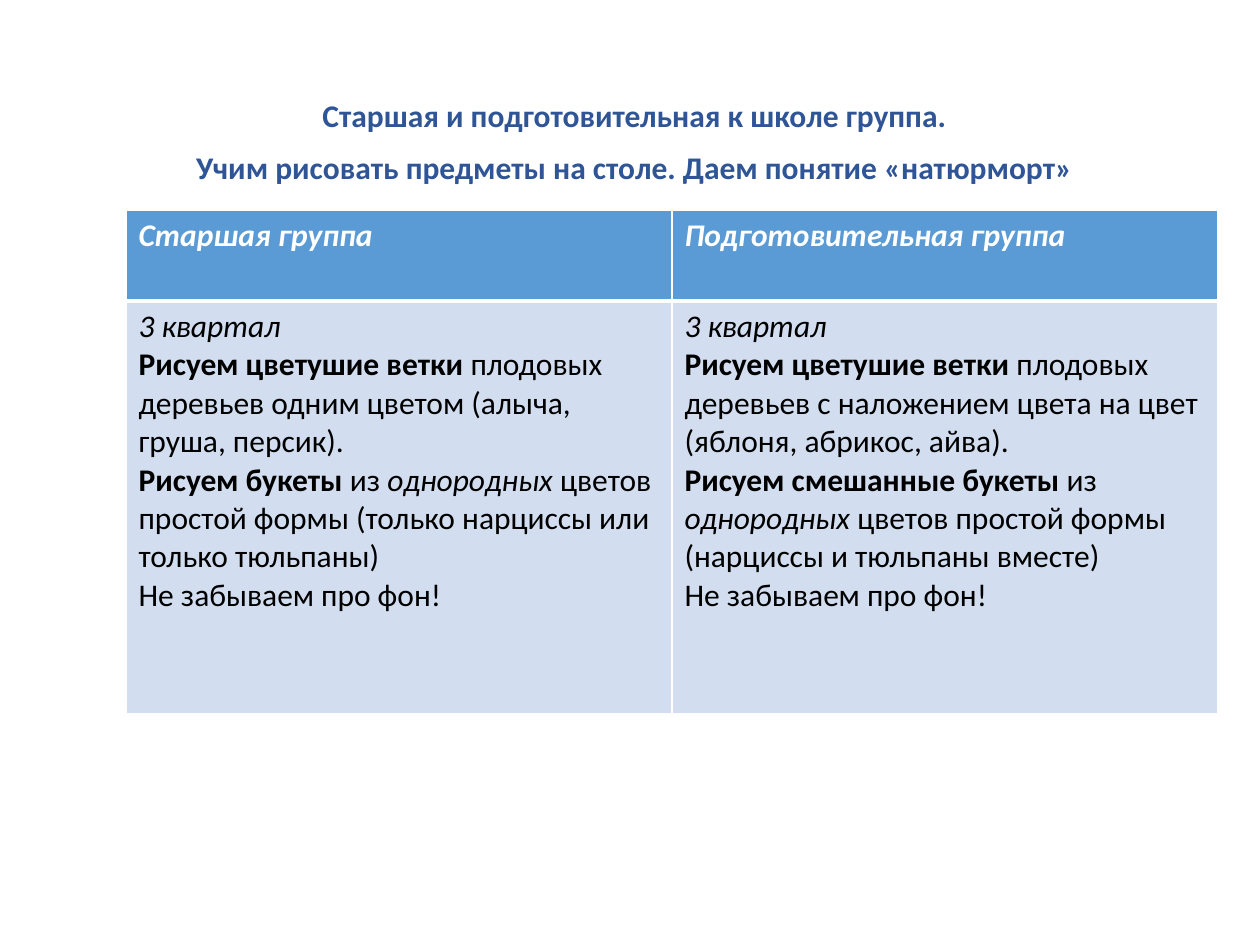
from lxml import etree
from pptx import Presentation
from pptx import util as u
from pptx.dml import color
from pptx.enum import text
from pptx.oxml import ns

SCALE = u.Inches(1) / 126
FONT, SIZE = "Calibri", 18
TITLE_BOX = (94, 94, 1081, 746)
TABLE_LEFT, TABLE_TOP = 126, 210
COLUMN_WIDTH = 546
ROW_HEIGHTS = (91, 413)
WHITE, BLACK, TITLE_BLUE = "FFFFFF", "000000", "2F5597"
HEADER_FILL, BODY_FILL = "5B9BD5", "D2DEEF"

TITLE = [
    [("Старшая и подготовительная к школе группа.", "b")],
    [("Учим рисовать предметы на столе. Даем понятие «натюрморт»", "b")],
]
QUARTER = [("3 квартал", "i")]
REMINDER = [("Не забываем про фон!", "")]
HEADERS = [
    [[("Старшая группа", "bi")]],
    [[("Подготовительная группа", "bi")]],
]
LESSONS = [
    [
        QUARTER,
        [("Рисуем цветушие ветки", "b"),
         (" плодовых деревьев одним цветом (алыча, груша, персик).", "")],
        [("Рисуем букеты", "b"), (" из ", ""), ("однородных", "i"),
         (" цветов простой формы (только нарциссы или только тюльпаны)", "")],
        REMINDER,
    ],
    [
        QUARTER,
        [("Рисуем цветушие ветки", "b"),
         (" плодовых деревьев с наложением цвета на цвет", "")],
        [("(яблоня, абрикос, айва).", "")],
        [("Рисуем смешанные букеты", "b"), (" из ", ""), ("однородных", "i"),
         (" цветов простой формы (нарциссы и тюльпаны вместе)", "")],
        REMINDER,
    ],
]
ROWS = [(HEADERS, HEADER_FILL, WHITE, 3), (LESSONS, BODY_FILL, BLACK, 1)]


def px(value):
    return u.Emu(round(value * SCALE))


def rgb(value):
    return color.RGBColor.from_string(value)


def write(frame, paragraphs, font_color):
    for index, runs in enumerate(paragraphs):
        paragraph = frame.paragraphs[0] if index == 0 else frame.add_paragraph()
        for words, style in runs:
            run = paragraph.add_run()
            run.text = words
            run.font.name, run.font.size = FONT, u.Pt(SIZE)
            run.font.bold, run.font.italic = "b" in style, "i" in style
            run.font.color.rgb = rgb(font_color)


def add_borders(cell, bottom_width):
    properties = cell._tc.get_or_add_tcPr()
    for side, width in zip("LRTB", (1, 1, 1, bottom_width)):
        line = etree.SubElement(properties, ns.qn(f"a:ln{side}"), w=str(u.Pt(width)))
        fill = etree.SubElement(line, ns.qn("a:solidFill"))
        etree.SubElement(fill, ns.qn("a:srgbClr"), val=WHITE)


def add_title(slide):
    title = slide.shapes.title
    title.left, title.top, title.width, title.height = map(px, TITLE_BOX)
    frame = title.text_frame
    frame.word_wrap = True
    frame.auto_size = text.MSO_AUTO_SIZE.NONE
    frame.vertical_anchor = text.MSO_ANCHOR.TOP
    write(frame, TITLE, TITLE_BLUE)
    for index, paragraph in enumerate(frame.paragraphs):
        paragraph.alignment = text.PP_ALIGN.CENTER
        paragraph.line_spacing = 0.9
        paragraph.space_before = u.Pt(10 if index else 0)


def add_lesson_table(slide):
    columns = len(HEADERS)
    table = slide.shapes.add_table(
        len(ROWS), columns, px(TABLE_LEFT), px(TABLE_TOP),
        px(COLUMN_WIDTH * columns), px(sum(ROW_HEIGHTS))).table
    for column in table.columns:
        column.width = px(COLUMN_WIDTH)
    for row, height in zip(table.rows, ROW_HEIGHTS):
        row.height = px(height)
    for row, (contents, fill, font_color, bottom_width) in zip(table.rows, ROWS):
        for cell, paragraphs in zip(row.cells, contents):
            add_borders(cell, bottom_width)
            cell.fill.solid()
            cell.fill.fore_color.rgb = rgb(fill)
            write(cell.text_frame, paragraphs, font_color)


def main():
    presentation = Presentation()
    presentation.slide_width, presentation.slide_height = px(1260), px(945)
    slide = presentation.slides.add_slide(presentation.slide_layouts[5])
    add_title(slide)
    add_lesson_table(slide)
    presentation.save("out.pptx")


if __name__ == "__main__":
    main()
